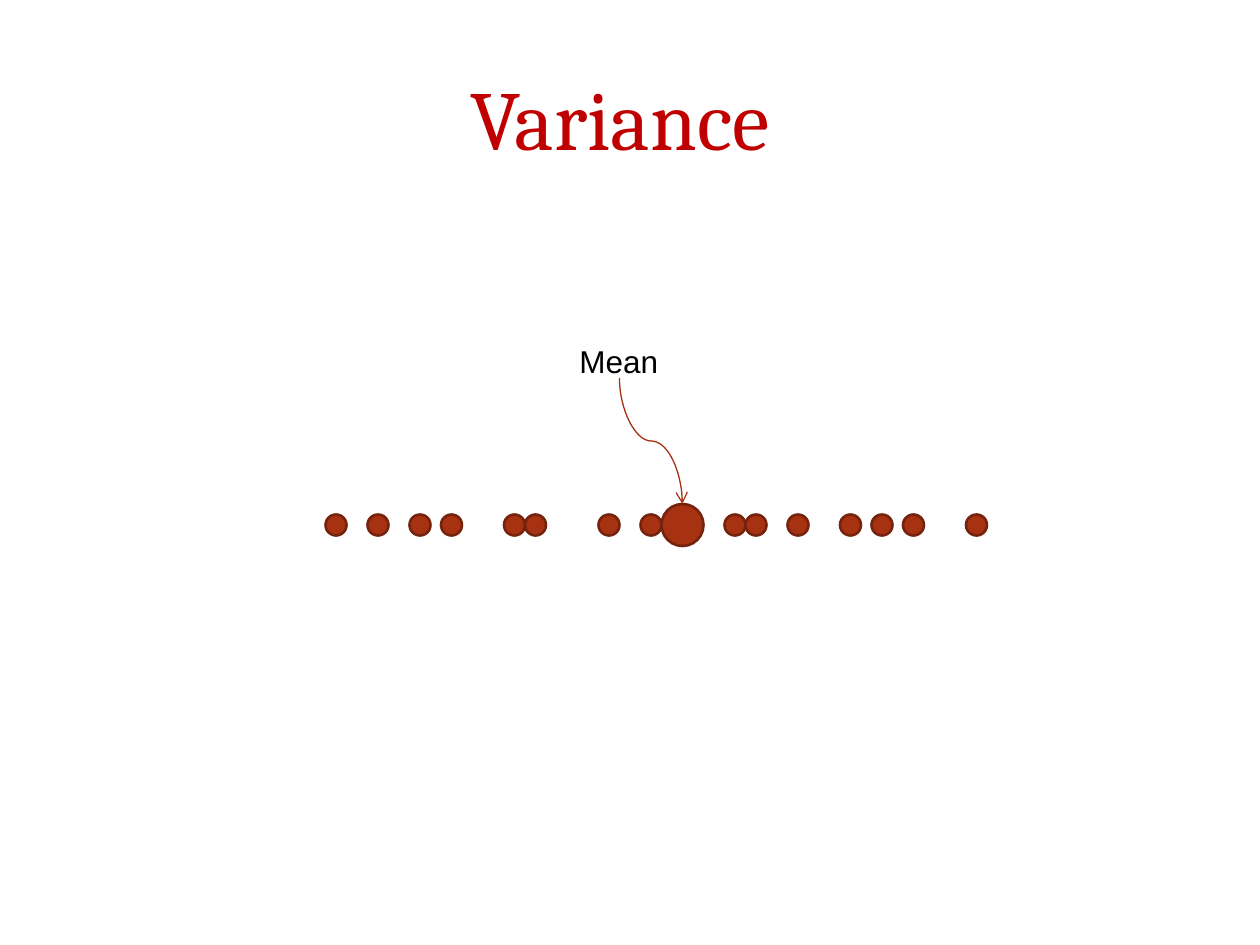
from lxml import etree
from pptx import Presentation
from pptx import util as u
from pptx.dml.color import RGBColor
from pptx.enum import shapes, text
from pptx.oxml.ns import qn

COLOURS = {"title": "C00000", "dot": "A63212", "rim": "75230C", "label": "000000"}
STEP = 2.54 / 12
AXIS = 50
SAMPLES = [32, 36, 40, 43, 49, 51, 58, 62, 70, 72, 76, 81, 84, 87, 93]
SAMPLE_SIZE = 2
MEAN = 65
MEAN_SIZE = 4
ARROW_START = (59, 36)

TITLE = dict(words="Variance", place=(1.7, 0.76, 21.59, 3.18), font="Cambria",
             size=48, colour_key="title", align=text.PP_ALIGN.CENTER,
             anchor=text.MSO_ANCHOR.MIDDLE, wrap=True)
MEAN_LABEL = dict(words="Mean", place=(11.43, 6.77, 2.12, 1.03), font="Arial",
                  size=18, colour_key="label", align=text.PP_ALIGN.LEFT,
                  anchor=text.MSO_ANCHOR.TOP, wrap=False)


def colour(key):
    return RGBColor.from_string(COLOURS[key])


def grid(*steps):
    return [u.Cm(step * STEP) for step in steps]


def add_words(slide, words, place, font, size, colour_key, align, anchor, wrap):
    frame = slide.shapes.add_textbox(*map(u.Cm, place)).text_frame
    frame.word_wrap = wrap
    frame.vertical_anchor = anchor
    if not wrap:
        frame.auto_size = text.MSO_AUTO_SIZE.SHAPE_TO_FIT_TEXT
    line = frame.paragraphs[0]
    line.alignment = align
    run = line.add_run()
    run.text = words
    run.font.name = font
    run.font.size = u.Pt(size)
    run.font.color.rgb = colour(colour_key)


def add_dot(slide, centre, size):
    dot = slide.shapes.add_shape(
        shapes.MSO_SHAPE.OVAL,
        *grid(centre - size / 2, AXIS - size / 2, size, size))
    dot.shadow.inherit = False
    dot.fill.solid()
    dot.fill.fore_color.rgb = colour("dot")
    dot.line.color.rgb = colour("rim")
    dot.line.width = u.Pt(1.5)


def add_mean_arrow(slide):
    x1, y1 = ARROW_START
    x2, y2 = MEAN, AXIS - MEAN_SIZE / 2
    mid_x, mid_y = (x1 + x2) / 2, (y1 + y2) / 2
    half_run, half_drop = (x2 - x1) / 2, (y2 - y1) / 2
    arrow = slide.shapes.add_connector(
        shapes.MSO_CONNECTOR.CURVE,
        *grid(mid_x + half_drop, mid_y - half_run,
              mid_x - half_drop, mid_y + half_run))
    arrow.line.color.rgb = colour("dot")
    arrow.line.width = u.Pt(0.75)
    properties = arrow._element.spPr
    properties.find(qn("a:xfrm")).set("rot", str(270 * 60000))
    etree.SubElement(properties.find(qn("a:ln")), qn("a:tailEnd"), type="arrow")
    etree.SubElement(properties, qn("a:effectLst"))


def main():
    deck = Presentation()
    deck.slide_width, deck.slide_height = u.Cm(25.4), u.Cm(19.05)
    slide = deck.slides.add_slide(deck.slide_layouts[6])
    for part in (TITLE, MEAN_LABEL):
        add_words(slide, **part)
    for sample in SAMPLES:
        add_dot(slide, sample, SAMPLE_SIZE)
    add_dot(slide, MEAN, MEAN_SIZE)
    add_mean_arrow(slide)
    deck.save("out.pptx")


if __name__ == "__main__":
    main()
